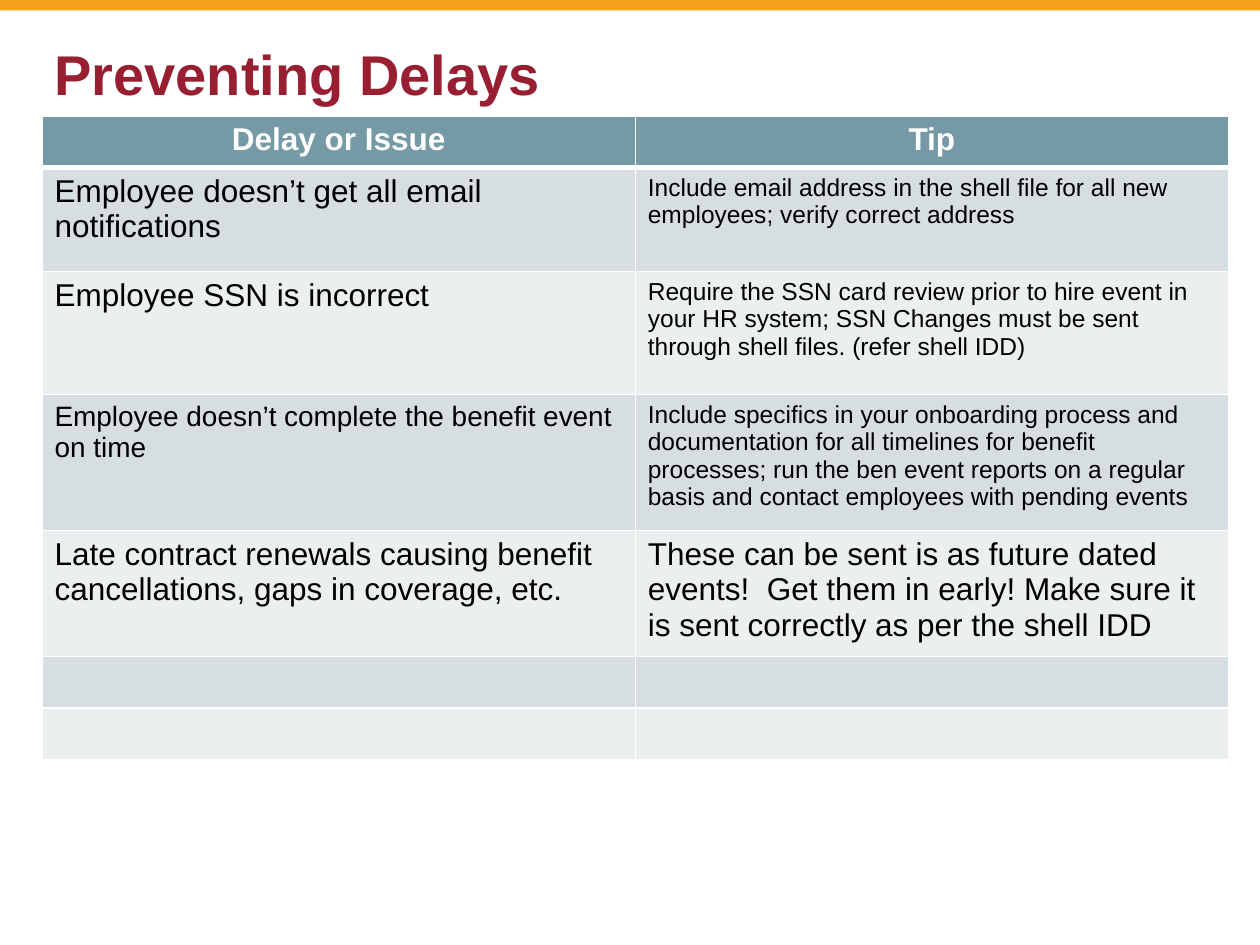
from lxml.etree import SubElement
from pptx import Presentation
from pptx.dml.color import RGBColor
from pptx.enum.shapes import MSO_SHAPE
from pptx.enum.text import MSO_ANCHOR, PP_ALIGN
from pptx.oxml.ns import qn
from pptx.util import Pt

HEADINGS = ("Delay or Issue", "Tip")
ROWS = [
    (59.5, ("Employee doesn’t get all email notifications", 18),
     ("Include email address in the shell file for all new employees; "
      "verify correct address", 14)),
    (70.25, ("Employee SSN is incorrect", 18),
     ("Require the SSN card review prior to hire event in your HR system; "
      "SSN Changes must be sent through shell files. (refer shell IDD)", 14)),
    (77.75, ("Employee doesn’t complete the benefit event on time", 16),
     ("Include specifics in your onboarding process and documentation for all "
      "timelines for benefit processes; run the ben event reports on a regular "
      "basis and contact employees with pending events", 14)),
    (68, ("Late contract renewals causing benefit cancellations, "
          "gaps in coverage, etc.", 18),
     ("These can be sent is as future dated events!  Get them in early! "
      "Make sure it is sent correctly as per the shell IDD", 18)),
    (29.5, ("", 18), ("", 18)),
    (29.5, ("", 18), ("", 18)),
]
BANDS = ("D6DEE1", "ECEFF0")
LEFT, WIDTH = 24, 678


def paint(target, color):
    target.solid()
    target.fore_color.rgb = RGBColor.from_string(color)


def write(frame, text, color, size, bold=False, align=PP_ALIGN.LEFT):
    paragraph = frame.paragraphs[0]
    paragraph.text = text
    paragraph.alignment = align
    for name, value in {"name": "Arial", "size": Pt(size), "bold": bold}.items():
        setattr(paragraph.font, name, value)
    paint(paragraph.font.fill, color)


def add_band(slide):
    band = slide.shapes.add_shape(MSO_SHAPE.RECTANGLE, 0, 0, Pt(720), Pt(6))
    band.shadow.inherit = False
    paint(band.fill, "F5A01A")
    band.line.fill.background()


def add_title(slide, text):
    title = slide.shapes.add_textbox(Pt(LEFT), Pt(18), Pt(WIDTH), Pt(48))
    frame = title.text_frame
    frame.word_wrap = True
    frame.vertical_anchor = MSO_ANCHOR.MIDDLE
    write(frame, text, "981E32", 32, bold=True)


def add_borders(cell, top=1, bottom=1):
    properties = cell._tc.get_or_add_tcPr()
    for side, width in {"L": 1, "R": 1, "T": top, "B": bottom}.items():
        border = SubElement(properties, qn(f"a:ln{side}"), w=str(Pt(width)))
        fill = SubElement(border, qn("a:solidFill"))
        SubElement(fill, qn("a:srgbClr"), val="FFFFFF")


def add_tips_table(slide):
    heights = [29.5] + [height for height, *_ in ROWS]
    tips = slide.shapes.add_table(len(heights), len(HEADINGS), Pt(LEFT), Pt(66.25),
                                  Pt(WIDTH), Pt(sum(heights))).table
    for row, height in zip(tips.rows, heights):
        row.height = Pt(height)
    for column, heading in enumerate(HEADINGS):
        tips.columns[column].width = Pt(WIDTH / len(HEADINGS))
        cell = tips.cell(0, column)
        add_borders(cell, bottom=3)
        paint(cell.fill, "759AA5")
        write(cell.text_frame, heading, "FFFFFF", 18, True, PP_ALIGN.CENTER)
    for index, (_, *entries) in enumerate(ROWS):
        for column, (text, size) in enumerate(entries):
            cell = tips.cell(index + 1, column)
            add_borders(cell, top=1 if index else 3)
            paint(cell.fill, BANDS[index % 2])
            write(cell.text_frame, text, "000000", size)


def main():
    deck = Presentation()
    deck.slide_width, deck.slide_height = Pt(720), Pt(540)
    slide = deck.slides.add_slide(deck.slide_layouts[6])
    add_band(slide)
    add_title(slide, "Preventing Delays")
    add_tips_table(slide)
    deck.save("out.pptx")


if __name__ == "__main__":
    main()
